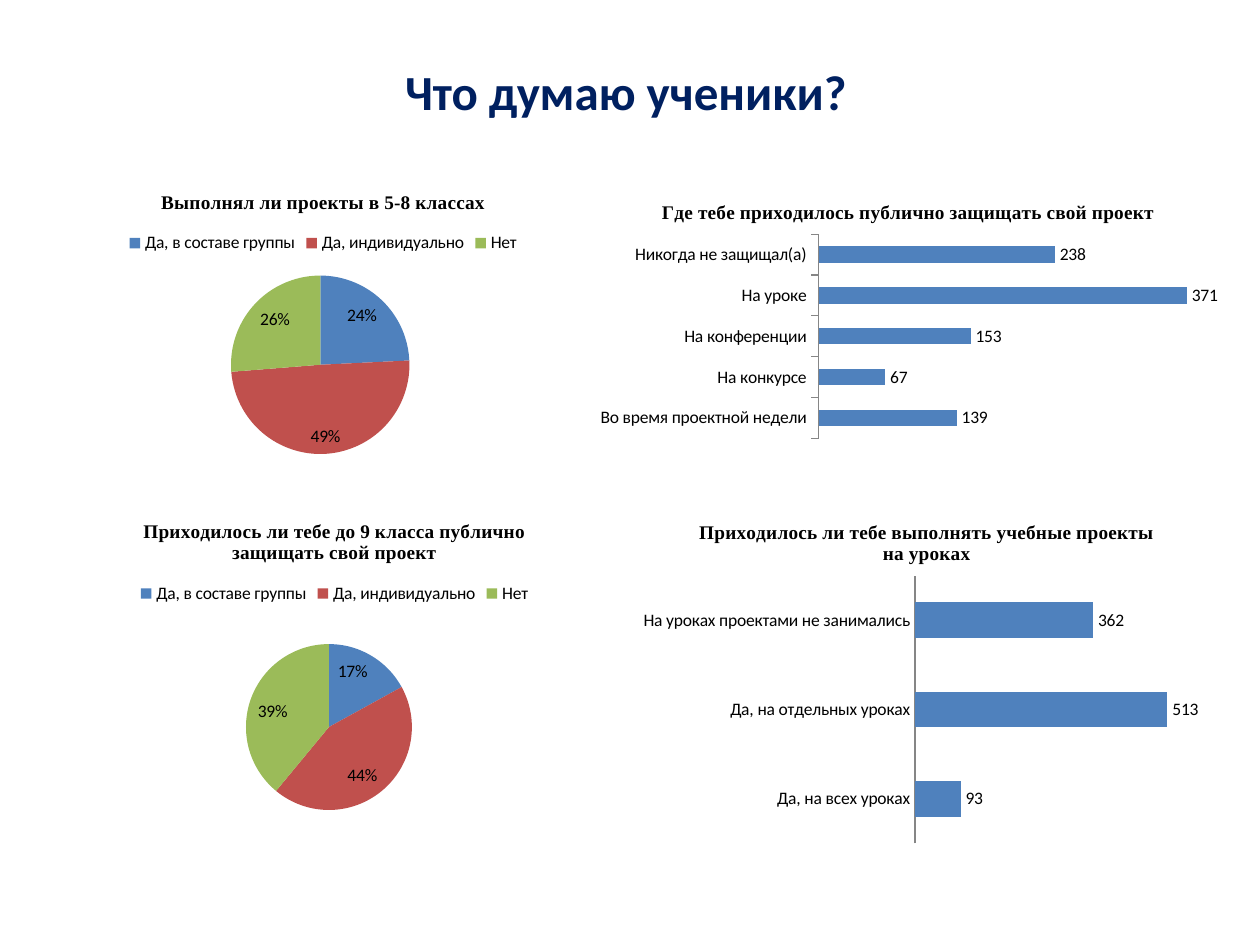
from lxml import etree
from pptx import Presentation
from pptx.chart.data import CategoryChartData
from pptx.dml.color import RGBColor
from pptx.enum.chart import (XL_CHART_TYPE, XL_LABEL_POSITION,
                             XL_LEGEND_POSITION, XL_TICK_MARK)
from pptx.enum.text import MSO_ANCHOR, PP_ALIGN
from pptx.oxml.ns import qn
from pptx.util import Inches, Pt

NAVY = RGBColor(0x00, 0x20, 0x60)
BLACK = RGBColor(0x00, 0x00, 0x00)
GRAY = RGBColor(0x86, 0x86, 0x86)
BLUE = RGBColor(0x4F, 0x81, 0xBD)
RED = RGBColor(0xC0, 0x50, 0x4D)
GREEN = RGBColor(0x9B, 0xBB, 0x59)

PIE = XL_CHART_TYPE.PIE
BAR = XL_CHART_TYPE.BAR_CLUSTERED
INSIDE_END = XL_LABEL_POSITION.INSIDE_END
OUTSIDE_END = XL_LABEL_POSITION.OUTSIDE_END
TOP = XL_LEGEND_POSITION.TOP
TICK_NONE = XL_TICK_MARK.NONE
TICK_OUT = XL_TICK_MARK.OUTSIDE

ANSWERS = ["Да, в составе группы", "Да, индивидуально", "Нет"]


def set_plot_layout(chart, fractions):
    """Place the inner plot area as fractions (x, y, w, h) of the chart."""
    plot_area = chart.element.find(qn("c:chart")).find(qn("c:plotArea"))
    old = plot_area.find(qn("c:layout"))
    if old is not None:
        plot_area.remove(old)
    layout = etree.Element(qn("c:layout"))
    manual = etree.SubElement(layout, qn("c:manualLayout"))
    settings = [("layoutTarget", "inner"), ("xMode", "edge"), ("yMode", "edge")]
    settings += zip("xywh", fractions)
    for name, value in settings:
        etree.SubElement(manual, qn("c:" + name)).set("val", str(value))
    plot_area.insert(0, layout)


def add_chart(s, kind, box, title, cats, vals, layout):
    """Add a one-series chart with the title and fonts all charts share."""
    data = CategoryChartData()
    data.categories = cats
    data.add_series("Series 1", vals)
    chart = s.shapes.add_chart(kind, *map(Inches, box), data).chart
    chart.font.name, chart.font.size = "Calibri", Pt(10)
    chart.font.color.rgb = BLACK
    chart.has_title = True
    tf = chart.chart_title.text_frame
    tf.text = title
    font = tf.paragraphs[0].runs[0].font
    font.name, font.size, font.bold = "Times New Roman", Pt(11), True
    font.color.rgb = BLACK
    set_plot_layout(chart, layout)
    return chart


def add_pie(s, box, title, vals, layout):
    chart = add_chart(s, PIE, box, title, ANSWERS, vals, layout)
    chart.has_legend = True
    chart.legend.position = TOP
    chart.legend.include_in_layout = False
    plot = chart.plots[0]
    plot.vary_by_categories = True
    for i, color in enumerate((BLUE, RED, GREEN)):
        fill = plot.series[0].points[i].format.fill
        fill.solid()
        fill.fore_color.rgb = color
    plot.has_data_labels = True
    labels = plot.data_labels
    labels.show_percentage, labels.show_value = True, False
    labels.number_format, labels.number_format_is_linked = "0%", False
    labels.position = INSIDE_END


def add_bars(s, box, title, cats, vals, layout, maximum, tick, overlap=0):
    chart = add_chart(s, BAR, box, title, cats, vals, layout)
    chart.has_legend = False
    plot = chart.plots[0]
    plot.vary_by_categories = False
    plot.gap_width, plot.overlap = 150, overlap
    fill = plot.series[0].format.fill
    fill.solid()
    fill.fore_color.rgb = BLUE
    plot.has_data_labels = True
    plot.data_labels.show_value = True
    plot.data_labels.position = OUTSIDE_END
    chart.category_axis.major_tick_mark = tick
    chart.category_axis.format.line.color.rgb = GRAY
    axis = chart.value_axis
    axis.minimum_scale, axis.maximum_scale = 0, maximum
    axis.has_major_gridlines = False
    axis.visible = False


def add_title(s, text):
    sp = s.shapes.title
    sp.left, sp.top, sp.width, sp.height = map(Inches, (0.51, 0.21, 9, 1.02))
    tf = sp.text_frame
    tf.text = text
    tf.vertical_anchor = MSO_ANCHOR.MIDDLE
    p = tf.paragraphs[0]
    p.alignment = PP_ALIGN.CENTER
    font = p.runs[0].font
    font.name, font.size, font.bold = "Calibri", Pt(28), True
    font.color.rgb = NAVY


def main():
    prs = Presentation()
    prs.slide_width, prs.slide_height = Inches(10), Inches(7.5)
    s = prs.slides.add_slide(prs.slide_layouts[5])
    add_title(s, "Что думаю ученики? ")

    # Where projects were defended
    add_bars(s, (4.67, 1.47, 5.08, 2.05),
             "Где тебе приходилось публично защищать свой проект",
             ["Во время проектной недели", "На конкурсе", "На конференции",
              "На уроке", "Никогда не защищал(а)"],
             [139, 67, 153, 371, 238], (0.36, 0.19, 0.62, 0.79), 400, TICK_OUT)

    # Public defence and project experience
    add_pie(s, (0.46, 3.99, 4.39, 2.6),
            "Приходилось ли тебе до 9 класса публично защищать свой проект",
            [17, 44, 39], (0.34, 0.43, 0.3, 0.51))
    add_pie(s, (0.28, 1.38, 4.57, 2.37), "Выполнял ли проекты в 5-8 классах",
            [24, 49, 26], (0.34, 0.34, 0.31, 0.6))

    # Projects in lessons
    add_bars(s, (5.01, 3.99, 4.69, 2.76),
             "Приходилось ли тебе выполнять учебные проекты на уроках",
             ["Да, на всех уроках", "Да, на отдельных уроках",
              "На уроках проектами не занимались"],
             [93, 513, 362], (0.48, 0.21, 0.5, 0.77), 600, TICK_NONE, -25)

    prs.save("out.pptx")


if __name__ == "__main__":
    main()
